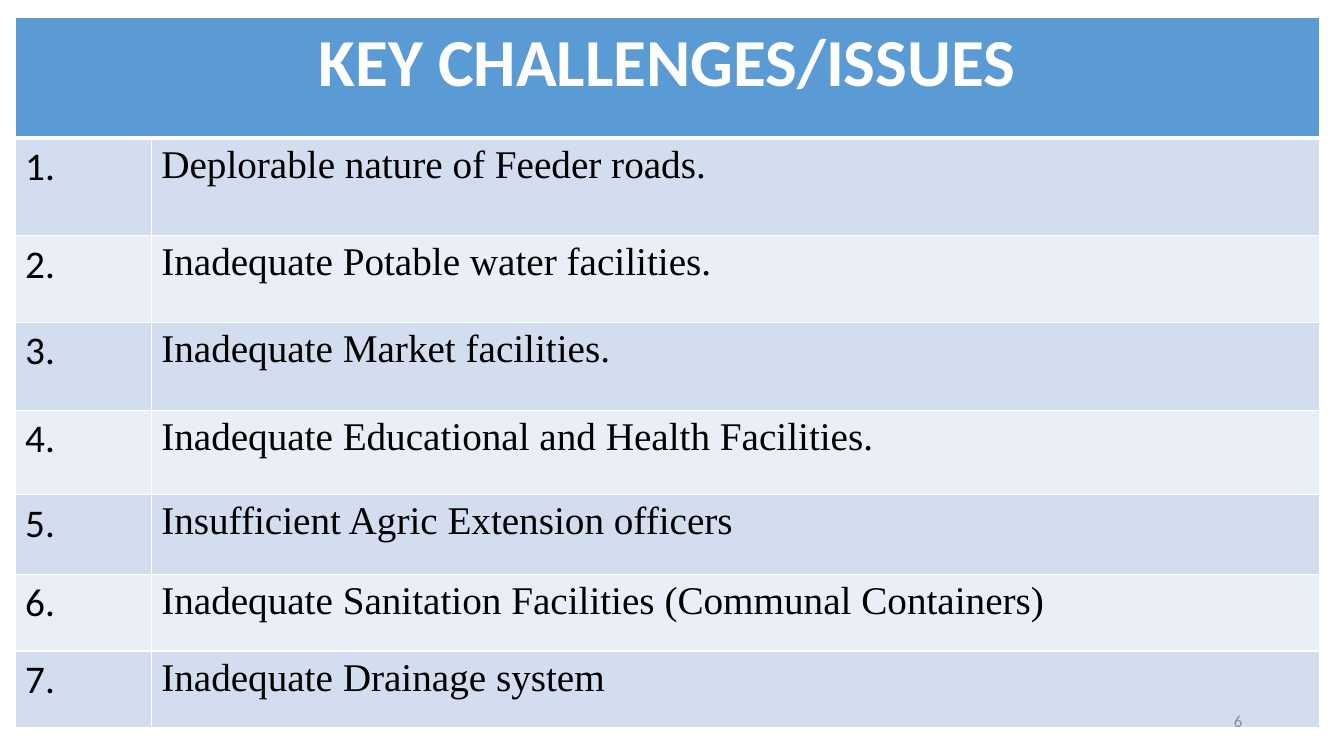
from lxml import etree
from pptx import Presentation
from pptx.dml.color import RGBColor
from pptx.enum.text import MSO_ANCHOR, PP_ALIGN
from pptx.oxml.ns import qn
from pptx.util import Inches, Pt

CENTER, RIGHT, LEFT = PP_ALIGN.CENTER, PP_ALIGN.RIGHT, PP_ALIGN.LEFT
MIDDLE = MSO_ANCHOR.MIDDLE

TITLE = "KEY CHALLENGES/ISSUES"
CHALLENGES = [
    "Deplorable nature of Feeder roads.",
    "Inadequate Potable water facilities.",
    "Inadequate Market facilities.",
    "Inadequate Educational and Health Facilities.",
    "Insufficient Agric Extension officers",
    "Inadequate Sanitation Facilities (Communal Containers)",
    "Inadequate Drainage system",
]
PAGE_NUMBER = "6"
COLUMN_WIDTHS = [1.35, 11.59]
ROW_HEIGHTS = [1.2, 0.97, 0.86, 0.87, 0.84, 0.79, 0.76, 0.76]
HEADER_FILL = "5B9BD5"
BAND_FILLS = ["D2DEEF", "EAEFF7"]
WHITE, BLACK, GREY = "FFFFFF", "000000", "8C8C8C"
SANS, SERIF = "Calibri", "Times New Roman"


def color(value):
    return RGBColor.from_string(value)


def write(text_frame, text, size, font_name, text_color, align=LEFT, bold=False):
    paragraph = text_frame.paragraphs[0]
    paragraph.alignment = align
    run = paragraph.add_run()
    run.text = text
    run.font.size = Pt(size)
    run.font.name = font_name
    run.font.bold = bold
    run.font.color.rgb = color(text_color)


def style_cell(cell, fill, bottom_width=1, top_width=1):
    properties = cell._tc.get_or_add_tcPr()
    widths = {"a:lnL": 1, "a:lnR": 1, "a:lnT": top_width, "a:lnB": bottom_width}
    for tag, width in widths.items():
        line = etree.SubElement(properties, qn(tag), w=str(Pt(width)))
        solid = etree.SubElement(line, qn("a:solidFill"))
        etree.SubElement(solid, qn("a:srgbClr"), val=WHITE)
    cell.fill.solid()
    cell.fill.fore_color.rgb = color(fill)


def add_challenge_table(slide):
    table = slide.shapes.add_table(
        len(ROW_HEIGHTS), len(COLUMN_WIDTHS), Inches(0.15), Inches(0.17),
        Inches(sum(COLUMN_WIDTHS)), Inches(sum(ROW_HEIGHTS)),
    ).table
    for column, width in zip(table.columns, COLUMN_WIDTHS):
        column.width = Inches(width)
    for row, height in zip(table.rows, ROW_HEIGHTS):
        row.height = Inches(height)

    header = table.cell(0, 0)
    header.merge(table.cell(0, 1))
    for cell in table.rows[0].cells:
        style_cell(cell, HEADER_FILL, bottom_width=3)
    write(header.text_frame, TITLE, 48, SANS, WHITE, CENTER, bold=True)

    for number, challenge in enumerate(CHALLENGES, start=1):
        fill = BAND_FILLS[(number - 1) % 2]
        entries = [(f"{number}.", SANS), (challenge, SERIF)]
        for cell, (text, font_name) in zip(table.rows[number].cells, entries):
            style_cell(cell, fill, top_width=3 if number == 1 else 1)
            write(cell.text_frame, text, 28, font_name, BLACK)


def add_page_number(slide):
    box = slide.shapes.add_textbox(Inches(9.42), Inches(6.95), Inches(3), Inches(0.4))
    box.text_frame.word_wrap = True
    box.text_frame.vertical_anchor = MIDDLE
    write(box.text_frame, PAGE_NUMBER, 12, SANS, GREY, RIGHT)


def main():
    presentation = Presentation()
    presentation.slide_width = Inches(13.33)
    presentation.slide_height = Inches(7.5)
    slide = presentation.slides.add_slide(presentation.slide_layouts[6])
    add_challenge_table(slide)
    add_page_number(slide)
    presentation.save("out.pptx")


if __name__ == "__main__":
    main()
